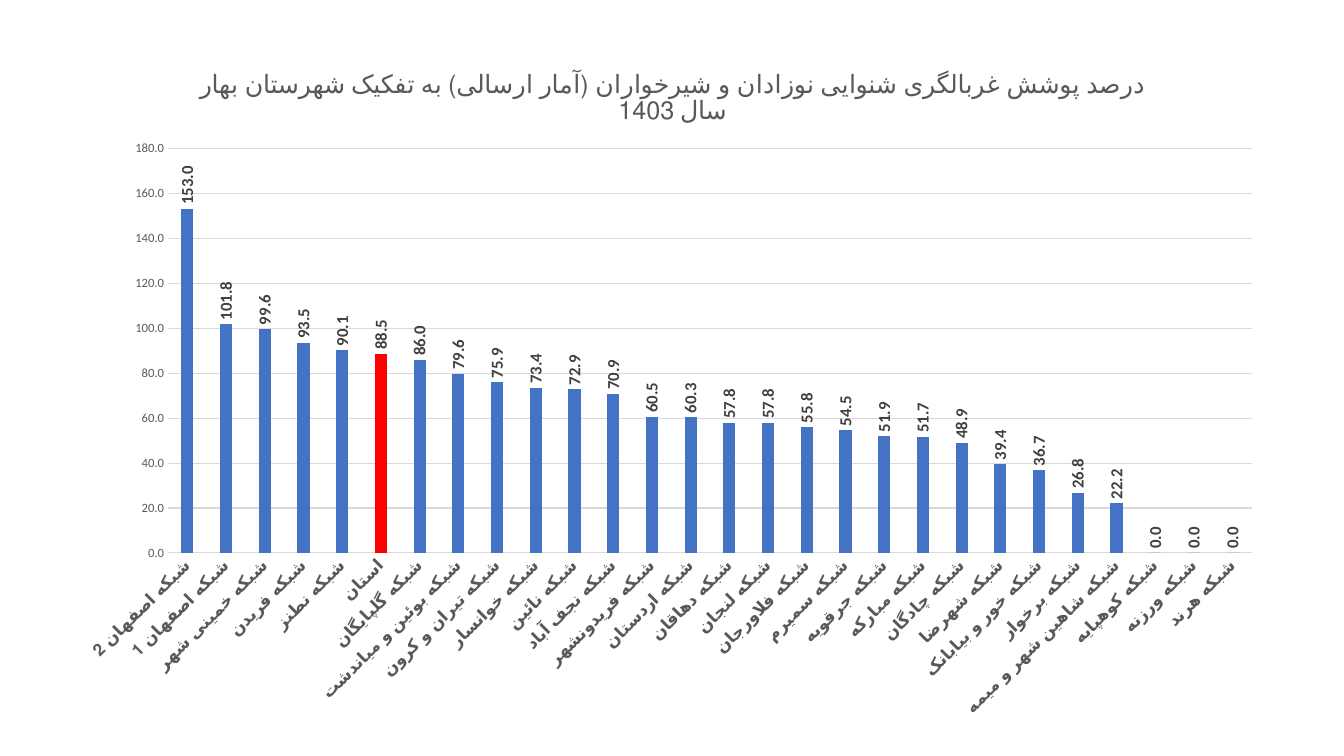
from pptx import Presentation
from pptx.chart.data import CategoryChartData
from pptx.dml.color import RGBColor
from pptx.enum.chart import XL_CHART_TYPE, XL_LABEL_POSITION, XL_TICK_MARK
from pptx.oxml import parse_xml
from pptx.oxml.ns import nsdecls
from pptx.util import Inches, Pt

CLUSTERED = XL_CHART_TYPE.COLUMN_CLUSTERED
OUTSIDE_END = XL_LABEL_POSITION.OUTSIDE_END
NO_TICK = XL_TICK_MARK.NONE

FONT = "Calibri"
GREY, DARK, PALE = "595959", "404040", "D9D9D9"
BLUE, RED = "4472C4", "FF0000"
TITLE = "درصد پوشش غربالگری شنوایی نوزادان و شیرخواران (آمار ارسالی) به تفکیک شهرستان بهار سال 1403"
PROVINCE = "استان"
COVERAGE = {
    "شبکه اصفهان 2": 153,
    "شبکه اصفهان 1": 101.8,
    "شبکه خمینی شهر": 99.6,
    "شبکه فریدن": 93.5,
    "شبکه نطنز": 90.1,
    PROVINCE: 88.5,
    "شبکه گلپایگان": 86,
    "شبکه بوئین و میاندشت": 79.6,
    "شبکه تیران و کرون": 75.9,
    "شبکه خوانسار": 73.4,
    "شبکه نائین": 72.9,
    "شبکه نجف آباد": 70.9,
    "شبکه فریدونشهر": 60.5,
    "شبکه اردستان": 60.3,
    "شبکه دهاقان": 57.8,
    "شبکه لنجان": 57.8,
    "شبکه فلاورجان": 55.8,
    "شبکه سمیرم": 54.5,
    "شبکه جرقویه": 51.9,
    "شبکه مبارکه": 51.7,
    "شبکه چادگان": 48.9,
    "شبکه شهرضا": 39.4,
    "شبکه خور و بیابانک": 36.7,
    "شبکه برخوار": 26.8,
    "شبکه شاهین شهر و میمه": 22.2,
    "شبکه کوهپایه": 0,
    "شبکه ورزنه": 0,
    "شبکه هرند": 0,
}


def rgb(color):
    return RGBColor.from_string(color)


def set_font(font, size, color, bold=False):
    font.name, font.size, font.bold = FONT, Pt(size), bold
    font.color.rgb = rgb(color)


def set_fill(fmt, color):
    fmt.fill.solid()
    fmt.fill.fore_color.rgb = rgb(color)


def set_line(fmt):
    fmt.line.color.rgb = rgb(PALE)
    fmt.line.width = Pt(0.75)


def rotate_text(part, degrees):
    """Turn the text of an axis or a set of data labels."""
    body = part._element.xpath("c:txPr/a:bodyPr")[0]
    body.set("rot", str(degrees * 60000))
    body.set("vert", "horz")


def place_plot(chart, x, y, w, h):
    """Fix the inner plot area, in fractions of the chart."""
    plot_area = chart._chartSpace.xpath("c:chart/c:plotArea")[0]
    for layout in plot_area.xpath("c:layout"):
        plot_area.remove(layout)
    sizes = "".join(f'<c:{k} val="{v}"/>' for k, v in zip("xywh", (x, y, w, h)))
    plot_area.insert(0, parse_xml(
        f'<c:layout {nsdecls("c")}><c:manualLayout><c:layoutTarget val="inner"/>'
        f'<c:xMode val="edge"/><c:yMode val="edge"/>{sizes}'
        "</c:manualLayout></c:layout>"))


def style_axes(chart):
    cat, val = chart.category_axis, chart.value_axis
    for axis in (cat, val):
        axis.major_tick_mark = axis.minor_tick_mark = NO_TICK
    set_font(cat.tick_labels.font, 12, GREY, bold=True)
    rotate_text(cat, -45)
    set_line(cat.format)

    set_font(val.tick_labels.font, 9, GREY)
    val.tick_labels.number_format = "0.0"
    val.tick_labels.number_format_is_linked = False
    val.minimum_scale, val.maximum_scale, val.major_unit = 0, 180, 20
    val.format.line.fill.background()
    set_line(val.major_gridlines.format)


def style_columns(plot):
    plot.vary_by_categories = False
    plot.gap_width, plot.overlap = 219, -27
    series = plot.series[0]
    series.invert_if_negative = False
    set_fill(series.format, BLUE)
    set_fill(series.points[list(COVERAGE).index(PROVINCE)].format, RED)

    labels = series.data_labels
    labels.show_value = True
    labels.number_format, labels.number_format_is_linked = "0.0", False
    labels.position = OUTSIDE_END
    set_font(labels.font, 12, DARK, bold=True)
    rotate_text(labels, -90)


def add_coverage_chart(slide, x, y, w, h):
    data = CategoryChartData(number_format="0.0")
    data.categories = list(COVERAGE)
    data.add_series("Series 1", list(COVERAGE.values()))
    chart = slide.shapes.add_chart(CLUSTERED, x, y, w, h, data).chart
    set_font(chart.font, 10, "000000")
    chart.has_legend = False
    chart.has_title = True
    chart.chart_title.include_in_layout = False
    p = chart.chart_title.text_frame.paragraphs[0]
    p.text = TITLE
    set_font(p.font, 18, GREY)
    style_axes(chart)
    style_columns(chart.plots[0])
    place_plot(chart, 0.083, 0.148, 0.896, 0.593)


def main():
    prs = Presentation()
    prs.slide_width, prs.slide_height = Inches(13.33), Inches(7.5)
    slide = prs.slides.add_slide(prs.slide_layouts[6])
    add_coverage_chart(slide, Inches(0.67), Inches(0.47), Inches(12), Inches(6.77))
    prs.save("out.pptx")


if __name__ == "__main__":
    main()
